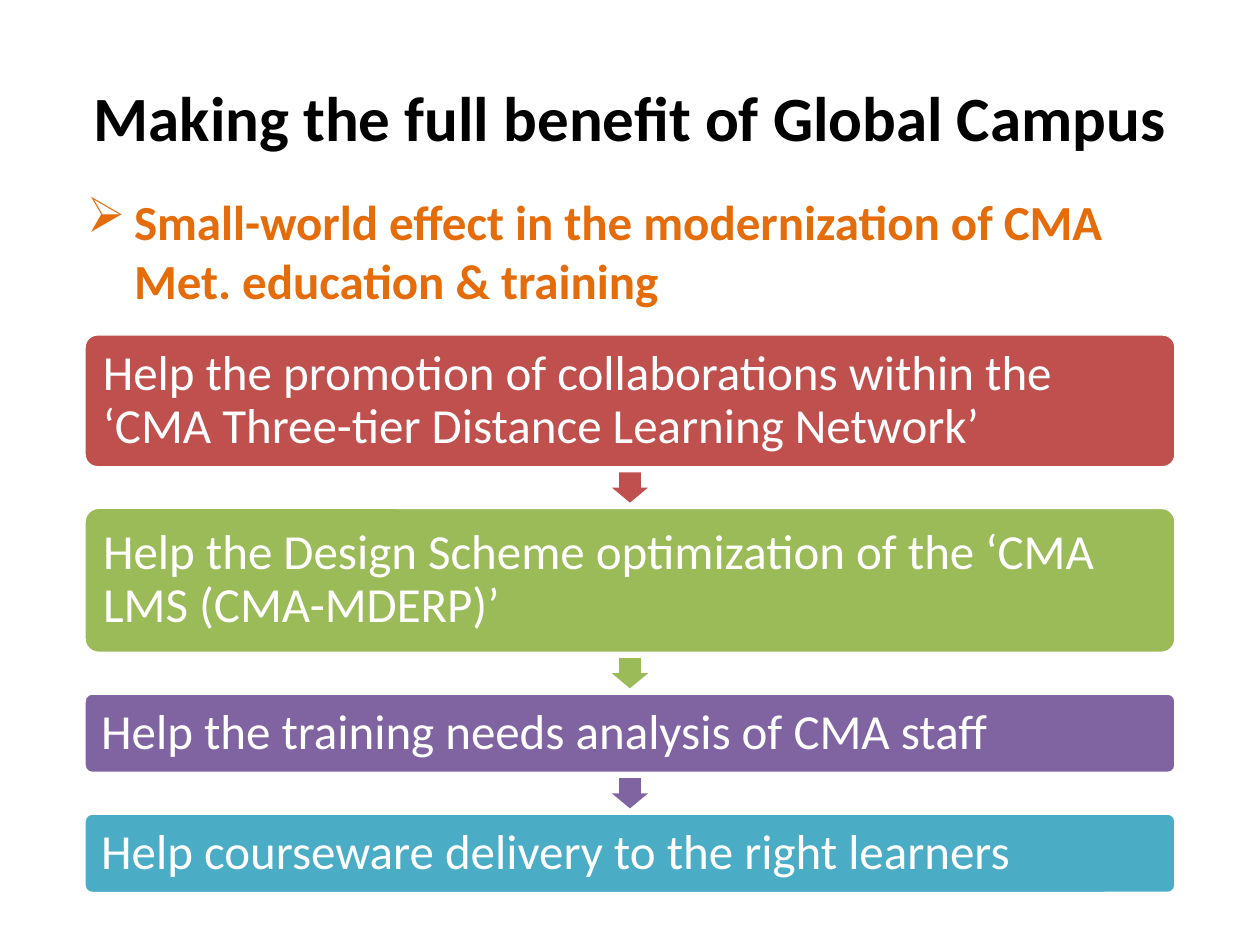
from dataclasses import dataclass

from lxml.etree import SubElement
from pptx import Presentation
from pptx.dml.color import RGBColor
from pptx.enum.shapes import MSO_SHAPE as Shape
from pptx.enum.text import MSO_ANCHOR as Anchor, PP_ALIGN as Align
from pptx.oxml.ns import qn
from pptx.util import Pt


@dataclass(frozen=True)
class Theme:
    font: str = "Calibri"
    title_size: int = 36
    body_size: int = 28
    ink: str = "000000"
    accent: str = "E46C0A"
    white: str = "FFFFFF"
    steps: tuple = ("C0504D", "9BBB59", "8064A2", "4BACC6")


THEME = Theme()

# Text and box height of each step
STEPS = [
    ("Help the promotion of collaborations within the "
     "‘CMA Three-tier Distance Learning Network’", 76.5),
    ("Help the Design Scheme optimization of the ‘CMA LMS (CMA-MDERP)’", 83.5),
    ("Help the training needs analysis of CMA staff", 46),
    ("Help courseware delivery to the right learners", 46),
]


def style(p, size, color, bold=False, align=Align.LEFT):
    p.alignment = align
    for r in p.runs:
        r.font.name = THEME.font
        r.font.size = Pt(size)
        r.font.bold = bold
        r.font.color.rgb = RGBColor.from_string(color)


def add_filled(s, kind, box, color):
    sp = s.shapes.add_shape(kind, *map(Pt, box))
    sp.shadow.inherit = False
    sp.fill.solid()
    sp.fill.fore_color.rgb = RGBColor.from_string(color)
    sp.line.fill.background()
    return sp


def place_title(s, box, text):
    title = s.shapes.title
    title.left, title.top, title.width, title.height = map(Pt, box)
    tf = title.text_frame
    tf.text = text
    tf.vertical_anchor = Anchor.MIDDLE
    style(tf.paragraphs[0], THEME.title_size, THEME.ink, True, Align.CENTER)


def add_lead(s, box, text):
    tf = s.shapes.add_textbox(*map(Pt, box)).text_frame
    tf.word_wrap = True
    tf.text = text
    p = tf.paragraphs[0]
    # Arrowhead bullet with a hanging indent
    pPr = p._p.get_or_add_pPr()
    pPr.set("marL", str(Pt(27)))
    pPr.set("indent", str(Pt(-27)))
    SubElement(pPr, qn("a:buChar"), char="➢")
    style(p, THEME.body_size, THEME.accent, True)


def add_step(s, box, text, color):
    sp = add_filled(s, Shape.ROUNDED_RECTANGLE, box, color)
    sp.adjustments[0] = 0.1
    sp.line.color.rgb = RGBColor.from_string(THEME.white)
    sp.line.width = Pt(2)
    tf = sp.text_frame
    tf.word_wrap = True
    tf.vertical_anchor = Anchor.MIDDLE
    tf.margin_left = tf.margin_right = Pt(8.5)
    tf.margin_top = tf.margin_bottom = Pt(8.5)
    tf.text = text
    p = tf.paragraphs[0]
    p.line_spacing = 0.9
    style(p, THEME.body_size, THEME.white)


def add_flow(s, box, steps):
    left, top, width, height = box
    gap = (height - sum(h for _, h in steps)) / (len(steps) - 1)
    arrow_w, arrow_h = 20.75, 17.25
    for i, ((text, h), color) in enumerate(zip(steps, THEME.steps)):
        add_step(s, (left, top, width, h), text, color)
        top += h
        if i < len(steps) - 1:
            # Arrow centred in the gap below the box
            arrow = add_filled(s, Shape.DOWN_ARROW,
                               (left + (width - arrow_w) / 2,
                                top + (gap - arrow_h) / 2,
                                arrow_w, arrow_h), color)
            arrow.adjustments[0] = 0.6
            arrow.adjustments[1] = 0.5
        top += gap


def main():
    prs = Presentation()
    prs.slide_width, prs.slide_height = Pt(720), Pt(540)
    s = prs.slides.add_slide(prs.slide_layouts[5])
    place_title(s, (36, 21.6, 648, 90),
                "Making the full benefit of Global Campus")
    add_lead(s, (42.5, 105.8, 647.3, 80),
             "Small-world effect in the modernization of CMA "
             "Met. education & training")
    add_flow(s, (48, 190.8, 624, 319.8), STEPS)
    prs.save("out.pptx")


if __name__ == "__main__":
    main()
